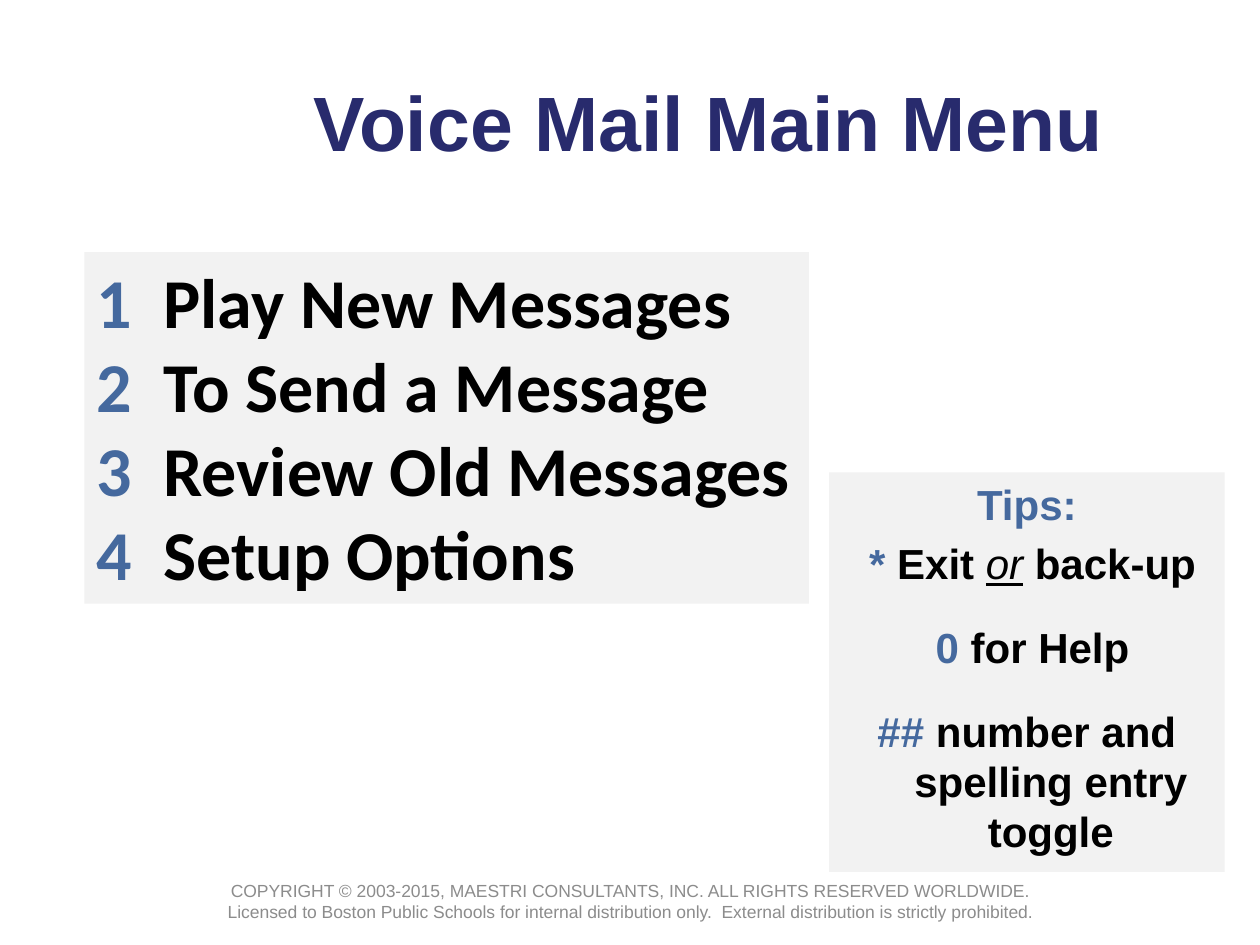
from pptx import Presentation
from pptx import util as u
from pptx.dml.color import RGBColor
from pptx.enum import shapes, text

EMU_PER_PX = 9144  # 100 px to the inch
COLORS = {"navy": "282B6D", "blue": "45699E", "black": "000000",
          "gray": "8C8C8C", "panel": "F2F2F2"}


class SlideBuilder:
    def __init__(self, presentation):
        self.slide = presentation.slides.add_slide(presentation.slide_layouts[5])

    def px(self, *lengths):
        return [u.Emu(length * EMU_PER_PX) for length in lengths]

    def color(self, name):
        return RGBColor.from_string(COLORS[name])

    def add_run(self, paragraph, words, color, **formats):
        run = paragraph.add_run()
        run.text = words
        run.font.color.rgb = self.color(color)
        for name, value in formats.items():
            setattr(run.font, name, value)

    def set_frame(self, frame, anchor):
        frame.word_wrap = True
        frame.vertical_anchor = anchor

    def title(self, box, words, **formats):
        shape = self.slide.shapes.title
        shape.left, shape.top, shape.width, shape.height = self.px(*box)
        self.set_frame(shape.text_frame, text.MSO_ANCHOR.MIDDLE)
        paragraph = shape.text_frame.paragraphs[0]
        paragraph.alignment = text.PP_ALIGN.CENTER
        self.add_run(paragraph, words, "navy", **formats)

    def footer(self, box, words, **formats):
        shape = self.slide.shapes.add_textbox(*self.px(*box))
        self.set_frame(shape.text_frame, text.MSO_ANCHOR.MIDDLE)
        paragraph = shape.text_frame.paragraphs[0]
        paragraph.alignment = text.PP_ALIGN.CENTER
        self.add_run(paragraph, words, "gray", **formats)

    def panel(self, box, lines, alignment, margin, **formats):
        """Each line is (first-line indent, space before, runs)."""
        shape = self.slide.shapes.add_shape(
            shapes.MSO_SHAPE.RECTANGLE, *self.px(*box))
        shape.shadow.inherit = False
        shape.fill.solid()
        shape.fill.fore_color.rgb = self.color("panel")
        shape.line.fill.background()
        frame = shape.text_frame
        self.set_frame(frame, text.MSO_ANCHOR.TOP)
        frame.auto_size = text.MSO_AUTO_SIZE.SHAPE_TO_FIT_TEXT
        for index, (indent, space, runs) in enumerate(lines):
            paragraph = frame.add_paragraph() if index else frame.paragraphs[0]
            paragraph.alignment = alignment
            paragraph.space_before = u.Pt(space)
            properties = paragraph._p.get_or_add_pPr()
            for name, length in {"marL": margin, "indent": indent}.items():
                properties.set(name, str(length * EMU_PER_PX))
            for words, color, *extra in runs:
                self.add_run(paragraph, words, color,
                             **{**formats, **(extra[0] if extra else {})})


def main():
    presentation = Presentation()
    presentation.slide_width = u.Inches(10)
    presentation.slide_height = u.Inches(7.5)
    builder = SlideBuilder(presentation)

    # Title and copyright line
    builder.title((175, 33, 775, 125), "Voice Mail Main Menu",
                  name="Arial", size=u.Pt(44), bold=True)
    builder.footer(
        (150, 695, 700, 40),
        "COPYRIGHT © 2003-2015, MAESTRI CONSULTANTS, INC. ALL RIGHTS RESERVED "
        "WORLDWIDE. Licensed to Boston Public Schools for internal distribution "
        "only.  External distribution is strictly prohibited.",
        name="Arial", size=u.Pt(10))

    # Numbered menu, with a tab to the hanging indent
    options = ["Play New Messages", "To Send a Message",
               "Review Old Messages", "Setup Options"]
    menu = [(-53, 0, [(str(number), "blue"), ("\t" + option, "black")])
            for number, option in enumerate(options, 1)]
    builder.panel((67, 200, 575, 279), menu, text.PP_ALIGN.LEFT, 53,
                  name="Calibri", size=u.Pt(40), bold=True)

    # Tips
    emphasis = {"bold": False, "italic": True, "underline": True}
    tips = [
        (-38, 0, [("Tips:", "blue")]),
        (-29, 5, [("* ", "blue"), ("Exit ", "black"), ("or", "black", emphasis),
                  (" back-up", "black")]),
        (-29, 19, [("0 ", "blue"), ("for Help", "black")]),
        (-38, 19, [("## ", "blue"),
                   ("number and spelling entry toggle", "black")]),
    ]
    builder.panel((658, 375, 314, 317), tips, text.PP_ALIGN.CENTER, 38,
                  name="Arial", size=u.Pt(24), bold=True)

    presentation.save("out.pptx")


if __name__ == "__main__":
    main()
